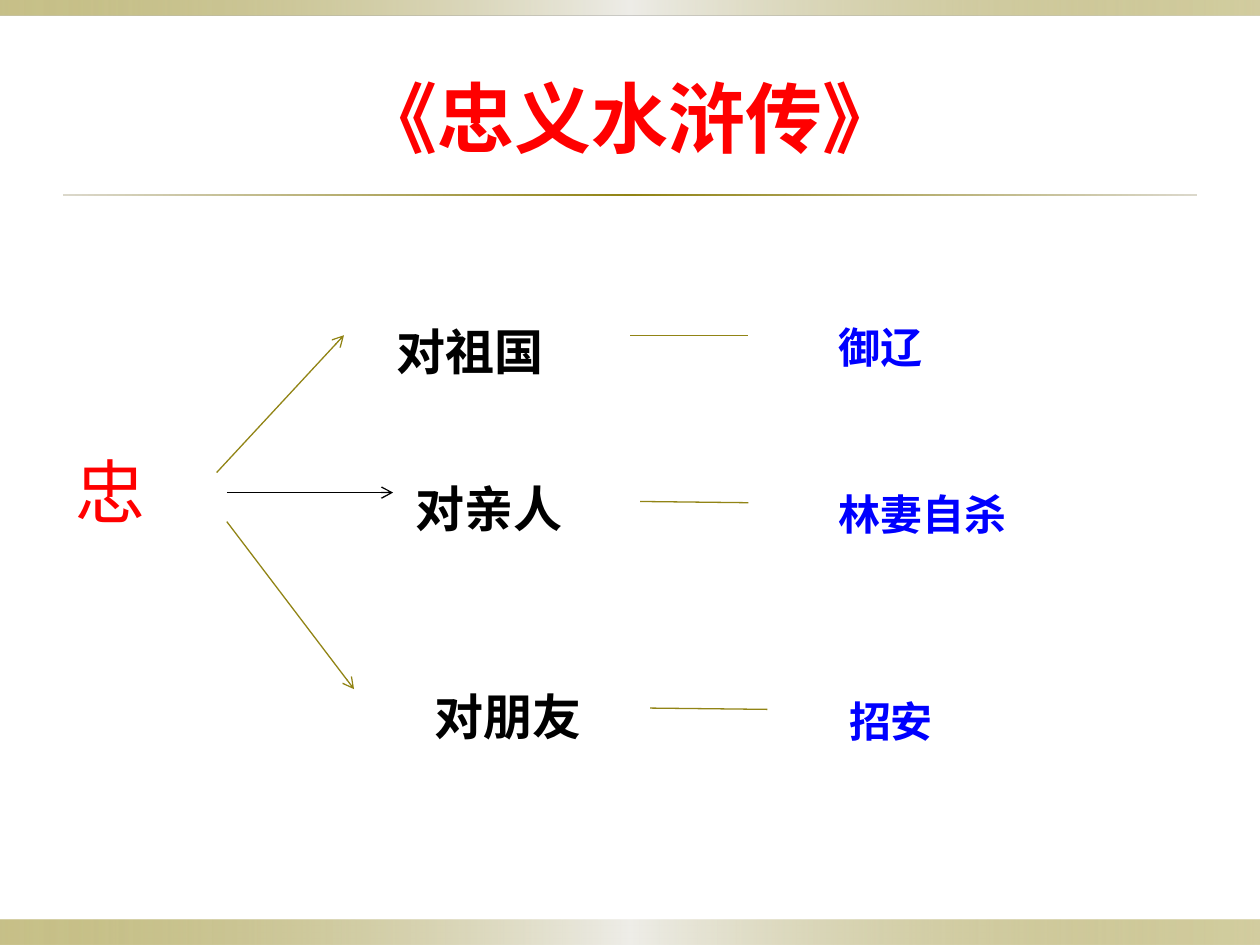
from lxml import etree
from pptx import Presentation
from pptx.dml.color import RGBColor
from pptx.enum.shapes import MSO_CONNECTOR, MSO_SHAPE
from pptx.enum.text import MSO_ANCHOR, PP_ALIGN
from pptx.oxml.ns import qn
from pptx.util import Inches, Pt

STRAIGHT = MSO_CONNECTOR.STRAIGHT
RECTANGLE = MSO_SHAPE.RECTANGLE
TOP, MIDDLE = MSO_ANCHOR.TOP, MSO_ANCHOR.MIDDLE
LEFT, CENTER = PP_ALIGN.LEFT, PP_ALIGN.CENTER
COLORS = {"olive": "918415", "pale": "EEEDE8", "rule_end": "DBD8CB",
          "red": "FF0000", "black": "000000", "blue": "0000FF"}

presentation = Presentation()
presentation.slide_width, presentation.slide_height = Inches(10), Inches(7.5)
slide = presentation.slides.add_slide(presentation.slide_layouts[5])


def place(*shares):
    """Turn alternating percentages of slide width and height into lengths."""
    sides = (presentation.slide_width, presentation.slide_height)
    return [int(sides[i % 2] * share / 100) for i, share in enumerate(shares)]


def write(shape, text, size, color, font="Arial", bold=True, align=LEFT, anchor=TOP):
    frame = shape.text_frame
    frame.word_wrap = True
    frame.vertical_anchor = anchor
    paragraph = frame.paragraphs[0]
    paragraph.alignment = align
    run = paragraph.add_run()
    run.text = text
    run.font.name, run.font.size, run.font.bold = font, Pt(size), bold
    run.font.color.rgb = RGBColor.from_string(COLORS[color])


# Gradient bands at the slide edges and the rule below the title
band_stops = [(0, "olive", 50), (50, "pale", 100), (100, "olive", 40)]
rule_stops = [(0, "rule_end", 100), (50, "olive", 100), (100, "rule_end", 100)]
for box, stops in [
    ((0, 97.33, 100, 2.67), band_stops),
    ((0, 0, 100, 1.6), band_stops),
    ((5, 20.53, 90, 0.27), rule_stops),
]:
    bar = slide.shapes.add_shape(RECTANGLE, *place(*box))
    bar.shadow.inherit = False
    bar.line.fill.background()
    bar.fill.gradient()
    bar.fill.gradient_angle = 0
    stop_list = bar._element.spPr.find(".//" + qn("a:gsLst"))
    for old_stop in list(stop_list):
        stop_list.remove(old_stop)
    for position, color, opacity in stops:
        stop = etree.SubElement(stop_list, qn("a:gs"), pos=str(position * 1000))
        stop_color = etree.SubElement(stop, qn("a:srgbClr"), val=COLORS[color])
        if opacity < 100:
            etree.SubElement(stop_color, qn("a:alpha"), val=str(opacity * 1000))

# Title
title = slide.shapes.title
title.left, title.top, title.width, title.height = place(5, 4, 90, 16.67)
write(title, "《忠义水浒传》", 44, "red", font="Lato", align=CENTER, anchor=MIDDLE)

# Root idea, its three branches and their examples
root = slide.shapes.add_textbox(*place(5, 46.53, 12, 10.67))
write(root, "忠", 40, "red", font="Lato", bold=False, anchor=MIDDLE)
for text, size, color, box in [
    ("对祖国", 28, "black", (30.5, 33.33, 15.6, 6.4)),
    ("对亲人", 28, "black", (32, 50, 14.8, 6.4)),
    ("对朋友", 28, "black", (33.5, 72, 14.1, 6.4)),
    ("御辽", 24, "blue", (65.6, 33.33, 14.8, 6.8)),
    ("林妻自杀", 24, "blue", (65.6, 51.07, 15.6, 5.73)),
    ("招安", 24, "blue", (66.4, 72.93, 11.7, 5.6)),
]:
    write(slide.shapes.add_textbox(*place(*box)), text, size, color)

# Arrows from the root, then plain lines from branch to example
for ends, color, has_arrow in [
    ((17.2, 50, 27.3, 35.47), "olive", True),
    ((18, 52.13, 31.2, 52.13), "black", True),
    ((18, 55.2, 28.1, 72.93), "olive", True),
    ((50, 35.47, 59.4, 35.47), "olive", False),
    ((50.8, 53.07, 59.4, 53.2), "olive", False),
    ((51.6, 74.93, 60.9, 75.07), "olive", False),
]:
    connector = slide.shapes.add_connector(STRAIGHT, *place(*ends))
    connector.line.width = Pt(0.75)
    connector.line.color.rgb = RGBColor.from_string(COLORS[color])
    if has_arrow:
        etree.SubElement(connector.line._get_or_add_ln(), qn("a:tailEnd"), type="arrow")
    etree.SubElement(connector._element.spPr, qn("a:effectLst"))

presentation.save("out.pptx")
